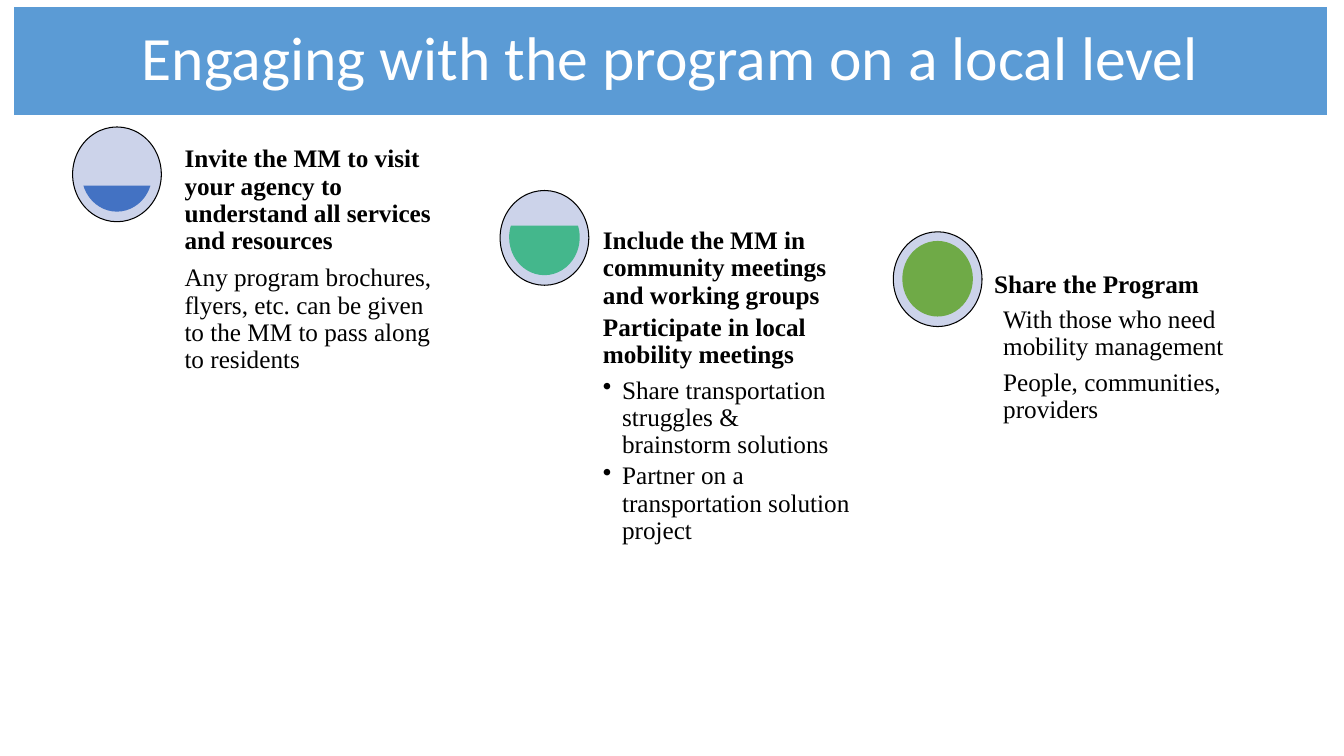
from pptx import Presentation
from pptx.dml.color import RGBColor
from pptx.enum.shapes import MSO_SHAPE
from pptx.enum.text import MSO_ANCHOR, PP_ALIGN
from pptx.oxml.ns import qn
from pptx.util import Inches, Pt
from lxml.etree import SubElement

BLUE = RGBColor(0x5B, 0x9B, 0xD5)
PALE = RGBColor(0xCC, 0xD3, 0xEA)
NAVY = RGBColor(0x43, 0x72, 0xC3)
TEAL = RGBColor(0x44, 0xB7, 0x8C)
GREEN = RGBColor(0x6F, 0xAA, 0x47)
BLACK = RGBColor(0, 0, 0)
WHITE = RGBColor(0xFF, 0xFF, 0xFF)
SERIF = "Times New Roman"


def add_form(slide, kind, box, fill):
    form = slide.shapes.add_shape(kind, *map(Inches, box))
    form.shadow.inherit = False
    form.fill.solid()
    form.fill.fore_color.rgb = fill
    form.line.fill.background()
    return form


def add_run(para, text, size, color, font, bold=False):
    para.line_spacing = 0.9
    run = para.add_run()
    run.text = text
    run.font.size = Pt(size)
    run.font.name = font
    run.font.bold = bold
    run.font.color.rgb = color


def add_bullet(para):
    props = para._p.get_or_add_pPr()
    props.set("lvl", "1")
    props.set("marL", str(Inches(0.19)))
    props.set("indent", str(Inches(-0.19)))
    tint = SubElement(props, qn("a:buClr"))
    SubElement(tint, qn("a:srgbClr")).set("val", str(BLACK))
    SubElement(props, qn("a:buChar")).set("char", "•")


def add_title(slide, text):
    bar = add_form(slide, MSO_SHAPE.RECTANGLE, (0.14, 0.07, 13.02, 1.07), BLUE)
    frame = bar.text_frame
    frame.word_wrap = True
    frame.vertical_anchor = MSO_ANCHOR.MIDDLE
    para = frame.paragraphs[0]
    para.alignment = PP_ALIGN.CENTER
    add_run(para, text, 44, WHITE, "Calibri")


def add_gauge(slide, left, top, fill, angles):
    rim = add_form(slide, MSO_SHAPE.OVAL, (left, top, 0.88, 0.94), PALE)
    rim.line.color.rgb = BLACK
    rim.line.width = Pt(0.75)
    level = add_form(slide, MSO_SHAPE.CHORD,
                     (left + 0.09, top + 0.09, 0.7, 0.75), fill)
    level.adjustments[0], level.adjustments[1] = angles


def add_text(slide, left, top, height, anchor, items):
    box = slide.shapes.add_textbox(*map(Inches, (left, top, 2.59, height)))
    frame = box.text_frame
    frame.word_wrap = True
    frame.vertical_anchor = anchor
    frame.margin_left = frame.margin_right = Inches(0.05)
    frame.margin_top = frame.margin_bottom = Inches(0.05)
    for index, (text, bold, gap, dot) in enumerate(items):
        para = frame.add_paragraph() if index else frame.paragraphs[0]
        add_run(para, text, 18, BLACK, SERIF, bold)
        para.space_before = Pt(gap)
        if dot:
            add_bullet(para)


def add_head(slide, left, top, text):
    add_text(slide, left, top, 0.94, MSO_ANCHOR.BOTTOM,
             [(text, True, 0, False)])


def add_body(slide, left, top, height, items):
    add_text(slide, left, top, height, MSO_ANCHOR.TOP, items)


def main():
    deck = Presentation()
    deck.slide_width = Inches(13.33)
    deck.slide_height = Inches(7.5)
    slide = deck.slides.add_slide(deck.slide_layouts[6])
    add_title(slide, "Engaging with the program on a local level")

    add_gauge(slide, 0.72, 1.26, NAVY, (11.68, 96.32))
    add_head(slide, 1.78, 1.64, "Invite the MM to visit your agency to "
             "understand all services and resources")
    add_body(slide, 1.78, 2.58, 3.95, [
        ("Any program brochures, flyers, etc. can be given to the MM "
         "to pass along to residents", False, 0, False)])

    add_gauge(slide, 4.96, 1.89, TEAL, (204.32, 119.68))
    add_head(slide, 5.93, 2.18,
             "Include the MM in community meetings and working groups")
    add_body(slide, 5.93, 3.07, 2.65, [
        ("Participate in local mobility meetings", True, 0, False),
        ("Share transportation struggles & brainstorm solutions",
         False, 6.3, True),
        ("Partner on a transportation solution project",
         False, 2.7, True)])

    add_gauge(slide, 8.86, 2.3, GREEN, (162, 162))
    add_head(slide, 9.81, 2.08, "Share the Program")
    add_body(slide, 9.9, 2.99, 3.95, [
        ("With those who need mobility management", False, 0, False),
        ("People, communities, providers", False, 6.3, False)])

    deck.save("out.pptx")


if __name__ == "__main__":
    main()
